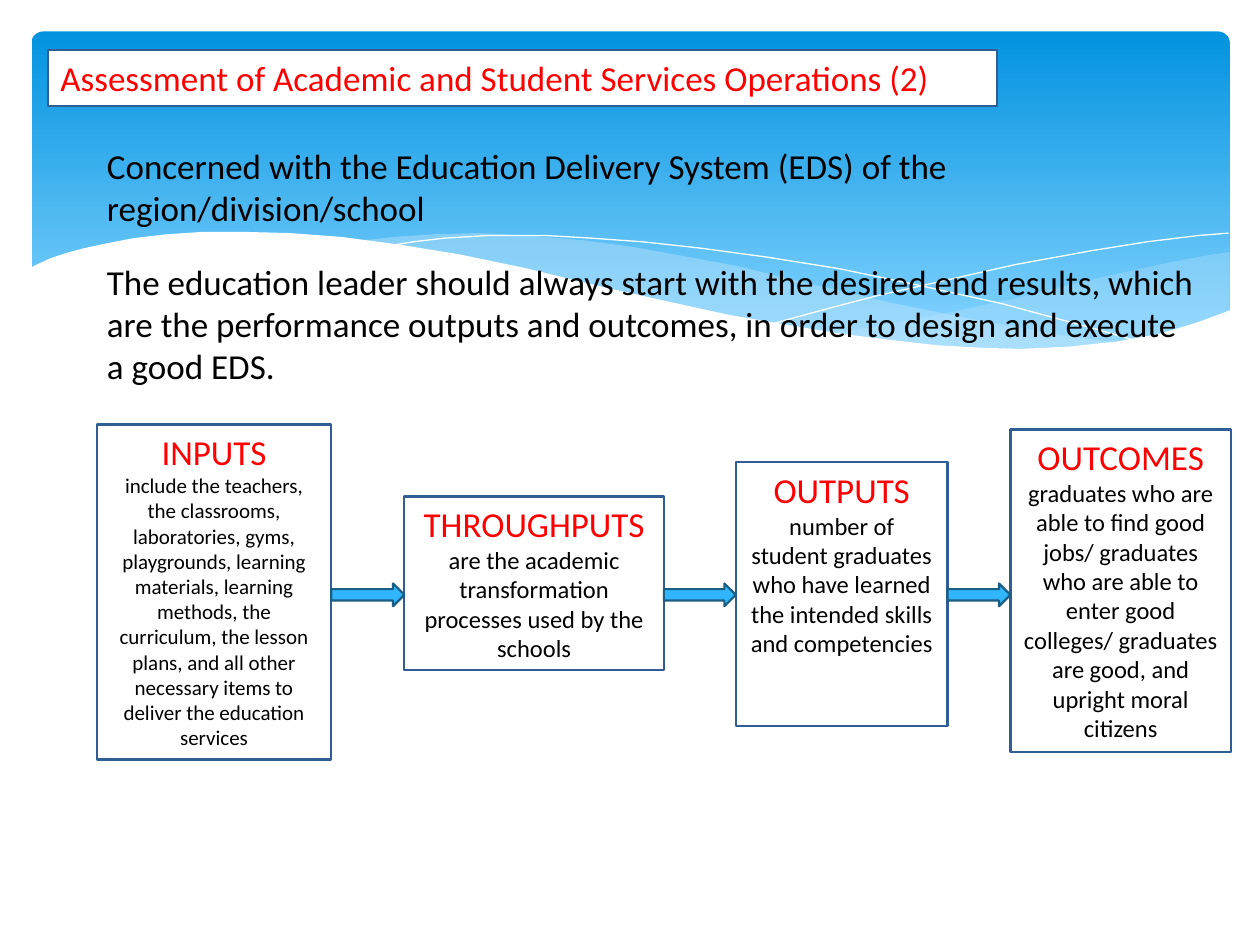
from dataclasses import dataclass

from lxml.etree import SubElement
from pptx import Presentation
from pptx.dml.color import RGBColor
from pptx.enum.shapes import MSO_SHAPE as Shape
from pptx.enum.text import MSO_ANCHOR as Anchor, PP_ALIGN as Align
from pptx.oxml.ns import qn
from pptx.util import Pt

FONT = "Calibri"
WHITE = RGBColor(0xFF, 0xFF, 0xFF)
BLACK = RGBColor(0, 0, 0)
RED = RGBColor(0xFF, 0, 0)
NAVY = RGBColor(0x31, 0x5D, 0x95)
SKY = RGBColor(0x31, 0xB6, 0xFD)
TEAL = RGBColor(0x19, 0x5F, 0x84)
MIST = RGBColor(0xC6, 0xE7, 0xFC)
DEEP = RGBColor(0x02, 0x93, 0xE0)
PALE = RGBColor(0x83, 0xD3, 0xFE)


@dataclass
class Wave:
    points: list[tuple[float, float]]
    fill: RGBColor | None = None  # None means an open white hairline
    alpha: int = 100


@dataclass
class Stage:
    left: float
    top: float
    width: float
    height: float
    head: str
    body: str
    size: int = 14


WAVES = [
    # Right swell
    Wave([(702.7, 144), (692.6, 145.4), (673.2, 149), (652.3, 153.4),
          (619.9, 160.6), (579.6, 170.6), (542.2, 178.6), (508.3, 185),
          (475.9, 190.8), (497.5, 193.7), (527, 197.3), (553.7, 199.4),
          (586.1, 200.2), (614.9, 198.7), (640.1, 195.8), (663.1, 190.8),
          (683.3, 185), (702.7, 177.8)], MIST, 29),
    # Middle swell
    Wave([(643, 196.6), (602.6, 190.8), (558, 182.9), (508.3, 172.8),
          (452.9, 159.8), (420.5, 151.9), (389.5, 146.2), (361.4, 141.1),
          (334.8, 137.5), (302.4, 134.6), (273.6, 133.2), (247.7, 133.9),
          (225.4, 135.4), (205.9, 137.5), (232.6, 141.1), (260.6, 146.2),
          (290.9, 151.9), (323.3, 159.8), (381.6, 172.8), (432.7, 183.6),
          (468, 190.1), (500.4, 194.4), (529.9, 198), (556.6, 199.4),
          (588.9, 200.2), (617, 199.4), (643, 196.6)], MIST, 40),
    # Hairlines
    Wave([(222.5, 140.4), (236.2, 138.2), (254.2, 136.1), (278.6, 134.6),
          (311.8, 134.6), (337.7, 136.1), (367.2, 138.2), (400.3, 141.8),
          (437.8, 146.9), (478.8, 153.4), (523.4, 162.7), (572.4, 173.5),
          (625.7, 187.9), (653, 195.8)]),
    Wave([(441.4, 185), (470.2, 177.1), (500.4, 169.2), (538.6, 160.6),
          (580.3, 151.2), (623.5, 143.3), (655.2, 138.2), (684.7, 134.6),
          (702, 133.2)]),
    # White front
    Wave([(703.4, 177.1), (684, 184.3), (662.4, 190.8), (638.6, 195.1),
          (612, 198), (582.5, 199.4), (560.2, 198.7), (535.7, 197.3),
          (509.8, 194.4), (481, 190.8), (450.7, 185.8), (416.9, 180),
          (380.9, 172.1), (342, 163.4), (301, 153.4), (262.8, 145.4),
          (227.5, 139.7), (195.1, 135.4), (165.6, 133.2), (139, 132.5),
          (115.9, 132.5), (95, 133.9), (76.3, 136.1), (61.2, 139),
          (48.2, 141.8), (37.4, 144.7), (28.8, 147.6), (20.9, 151.2),
          (16.6, 153.4), (16.6, 236.9), (703.4, 236.9)], WHITE),
]

STAGES = [
    Stage(55.4, 242.6, 133.9, 191.5, "INPUTS",
          "include the teachers, the classrooms, laboratories, gyms, "
          "playgrounds, learning materials, learning methods, the curriculum, "
          "the lesson plans, and all other necessary items to deliver the "
          "education services", 12),
    Stage(231.1, 283.7, 148.3, 99.4, "THROUGHPUTS",
          "are the academic transformation processes used by the schools"),
    Stage(420.5, 264.2, 121, 150.5, "OUTPUTS",
          "number of student graduates who have learned the intended skills "
          "and competencies"),
    Stage(577.4, 245.5, 126, 184.3, "OUTCOMES",
          "graduates who are able to find good jobs/ graduates who are able "
          "to enter good colleges/ graduates are good, and upright moral "
          "citizens"),
]


def add_wave(slide, wave: Wave) -> None:
    start, *rest = [(Pt(x), Pt(y)) for x, y in wave.points]
    path = slide.shapes.build_freeform(*start)
    path.add_line_segments(rest, close=wave.fill is not None)
    form = path.convert_to_shape()
    form.shadow.inherit = False
    if wave.fill is None:
        form.fill.background()
        form.line.color.rgb = WHITE
        form.line.width = Pt(0)
        return
    form.line.fill.background()
    form.fill.solid()
    form.fill.fore_color.rgb = wave.fill
    if wave.alpha < 100:
        tone = form._element.spPr.find(qn("a:solidFill"))[0]
        SubElement(tone, qn("a:alpha")).set("val", str(wave.alpha * 1000))


def add_block(slide, kind: Shape, left: float, top: float, width: float,
              height: float, fill: RGBColor, edge: RGBColor):
    block = slide.shapes.add_shape(kind, Pt(left), Pt(top), Pt(width),
                                   Pt(height))
    block.shadow.inherit = False
    block.fill.solid()
    block.fill.fore_color.rgb = fill
    block.line.color.rgb = edge
    block.line.width = Pt(1.25)
    return block


def write(frame, lines: list[tuple[str, int, RGBColor]],
          align: Align = Align.LEFT) -> None:
    frame.word_wrap = True
    frame.vertical_anchor = Anchor.TOP
    frame.text = "\n".join(text for text, _, _ in lines)
    for para, (_, size, color) in zip(frame.paragraphs, lines):
        para.alignment = align
        for run in para.runs:
            run.font.name = FONT
            run.font.size = Pt(size)
            run.font.color.rgb = color


def add_stage(slide, stage: Stage) -> None:
    box = add_block(slide, Shape.RECTANGLE, stage.left, stage.top,
                    stage.width, stage.height, WHITE, NAVY)
    write(box.text_frame, [(stage.head, 20, RED),
                           (stage.body, stage.size, BLACK)], Align.CENTER)


def main() -> None:
    deck = Presentation()
    deck.slide_width, deck.slide_height = Pt(720), Pt(540)
    slide = deck.slides.add_slide(deck.slide_layouts[6])

    # Gradient banner and waves
    banner = add_block(slide, Shape.ROUNDED_RECTANGLE, 18, 18, 684.7, 194.4,
                       DEEP, DEEP)
    banner.adjustments[0] = 0.034
    banner.line.fill.background()
    banner.fill.gradient()
    banner.fill.gradient_angle = 270
    for stop, color, place in zip(banner.fill.gradient_stops, (DEEP, PALE),
                                  (0, 0.9)):
        stop.color.rgb = color
        stop.position = place
    for wave in WAVES:
        add_wave(slide, wave)

    # Title
    title = add_block(slide, Shape.RECTANGLE, 27.4, 28.8, 542.2, 31.7,
                      WHITE, NAVY)
    write(title.text_frame, [
        ("Assessment of Academic and Student Services Operations (2)",
         20, RED)])

    # Introduction
    intro = slide.shapes.add_textbox(Pt(54), Pt(79.2), Pt(635.8), Pt(74.2))
    write(intro.text_frame, [
        ("Concerned with the Education Delivery System (EDS) of the "
         "region/division/school", 20, BLACK),
        ("The education leader should always start with the desired end "
         "results, which are the performance outputs and outcomes, in order "
         "to design and execute a good EDS.", 20, BLACK)])
    intro.text_frame.paragraphs[1].space_before = Pt(18)

    # Stages, with an arrow across each gap
    for stage in STAGES:
        add_stage(slide, stage)
    for stage, after in zip(STAGES, STAGES[1:]):
        right = stage.left + stage.width
        add_block(slide, Shape.RIGHT_ARROW, right, 333.4, after.left - right,
                  13, SKY, TEAL)

    deck.save("out.pptx")


if __name__ == "__main__":
    main()
